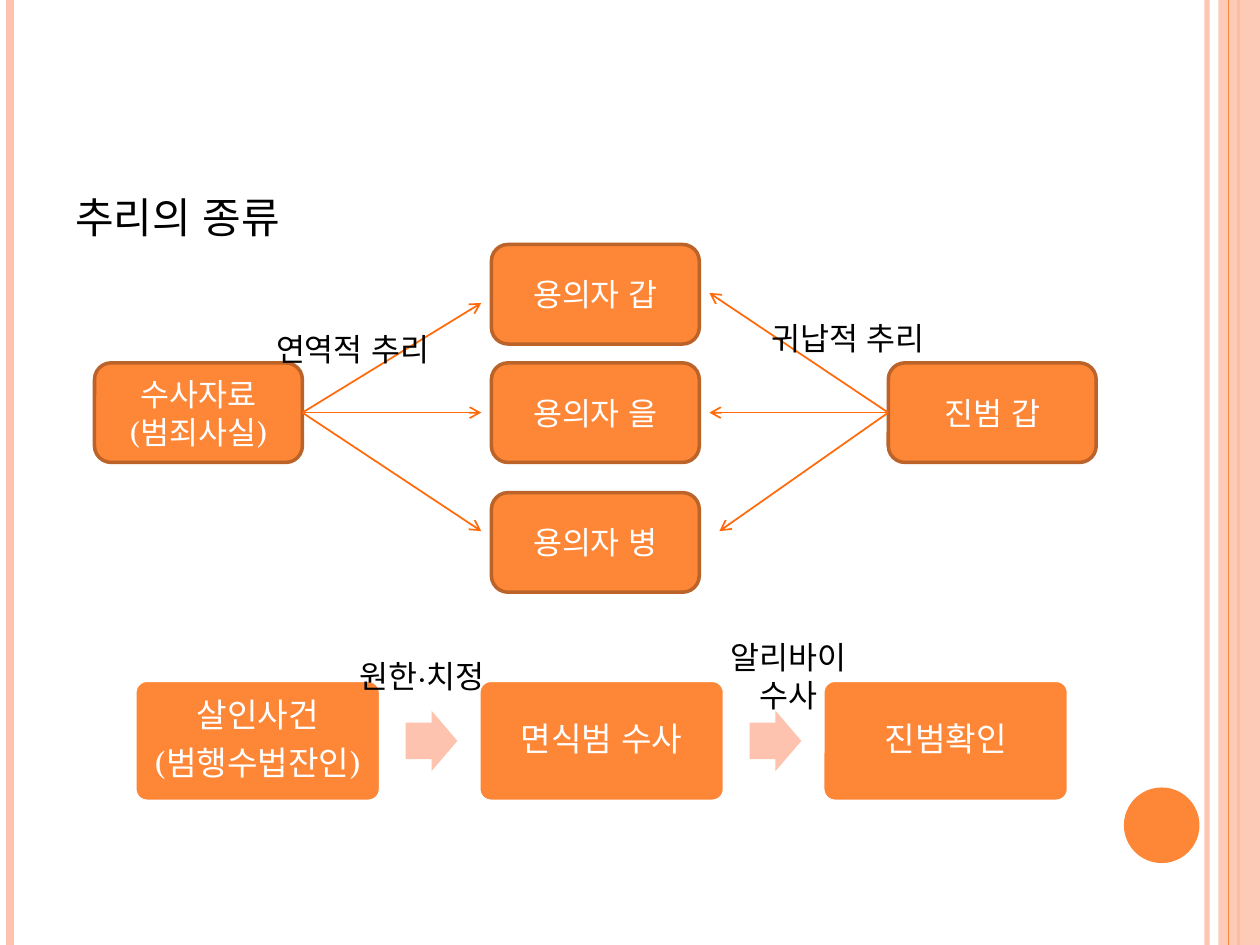
from dataclasses import dataclass

from lxml import etree
from pptx import Presentation
from pptx import util as u
from pptx.dml.color import RGBColor
from pptx.enum import shapes, text
from pptx.oxml import ns

Inches, Pt = u.Inches, u.Pt
SHAPE = shapes.MSO_SHAPE


@dataclass(frozen=True)
class Theme:
    font: str = "TeX Gyre Schola"
    orange: str = "FE8637"
    peach: str = "FEC3AE"
    brown: str = "BC6329"
    arrow: str = "FF6B0A"
    black: str = "000000"
    white: str = "FFFFFF"
    heading_size: float = 24
    step_size: float = 19
    body_size: float = 18


THEME = Theme()


def rgb(color):
    return RGBColor.from_string(color)


def set_opacity(shape, percent):
    for color in shape._element.spPr.iter(ns.qn("a:srgbClr")):
        etree.SubElement(color, ns.qn("a:alpha"), val=str(percent * 1000))


def write(shape, lines, size=THEME.body_size, color=THEME.black,
          align=text.PP_ALIGN.CENTER, anchor=text.MSO_ANCHOR.MIDDLE,
          inset=None, line_spacing=None, space_after=None):
    frame = shape.text_frame
    frame.word_wrap = True
    frame.vertical_anchor = anchor
    if inset is not None:
        frame.margin_left = frame.margin_right = Inches(inset)
        frame.margin_top = frame.margin_bottom = Inches(inset)
    for i, line in enumerate(lines.split("\n")):
        paragraph = frame.paragraphs[0] if i == 0 else frame.add_paragraph()
        paragraph.alignment = align
        paragraph.line_spacing = line_spacing
        paragraph.space_after = space_after
        run = paragraph.add_run()
        run.text = line
        run.font.name, run.font.size = THEME.font, Pt(size)
        run.font.color.rgb = rgb(color)
        # Korean text takes its font from the East Asian slot
        etree.SubElement(run._r.get_or_add_rPr(), ns.qn("a:ea"), typeface=THEME.font)


def add_label(slide, box, words, **style):
    label = slide.shapes.add_textbox(*map(Inches, box))
    write(label, words, **style)


def add_block(slide, kind, box, fill, outline=None, adjustments=()):
    block = slide.shapes.add_shape(kind, *map(Inches, box))
    block.shadow.inherit = False
    block.fill.solid()
    block.fill.fore_color.rgb = rgb(fill)
    if outline:
        block.line.color.rgb = rgb(outline)
        block.line.width = Pt(2)
    else:
        block.line.fill.background()
    for i, value in enumerate(adjustments):
        block.adjustments[i] = value
    return block


def add_line(slide, start, end, color, width, arrow=False):
    line = slide.shapes.add_connector(
        shapes.MSO_CONNECTOR.STRAIGHT, *map(Inches, (*start, *end)))
    line.line.color.rgb = rgb(color)
    line.line.width = Pt(width)
    if arrow:
        etree.SubElement(line.line._get_or_add_ln(), ns.qn("a:tailEnd"), type="arrow")
    etree.SubElement(line._element.spPr, ns.qn("a:effectLst"))
    return line


def add_frame(slide, width, height):
    """Stripes along both edges and the corner disc."""
    def stripe(x, color, weight):
        return add_line(slide, (x, 0), (x, height), color, weight)

    set_opacity(stripe(width - 0.42, THEME.peach, 3), 93)
    stripe(0.08, THEME.peach, 4.5)
    stripe(width - 0.17, THEME.orange, 1.5)
    band = add_block(slide, SHAPE.RECTANGLE, (width - 0.33, 0, 0.33, height), THEME.peach)
    set_opacity(band, 87)
    stripe(width - 0.25, THEME.orange, 0.75)
    add_block(slide, SHAPE.OVAL, (width - 1.08, height - 1.25, 0.6, 0.6), THEME.orange)


def add_inference(slide, box):
    """Evidence and culprit both pointing at the three suspects."""
    left, top, width, height = box
    node_w, node_h = 1.65, 0.79
    middle_top = top + 0.94
    center_y = middle_top + node_h / 2
    suspects_x = left + (width - node_w) / 2
    culprit_x = left + width - node_w
    nodes = [
        ("용의자 갑", suspects_x, top),
        ("용의자 을", suspects_x, middle_top),
        ("용의자 병", suspects_x, top + height - node_h),
        ("진범 갑", culprit_x, middle_top),
        ("수사자료\n(범죄사실)", left, middle_top),
    ]
    for words, x, y in nodes:
        node = add_block(slide, SHAPE.ROUNDED_RECTANGLE, (x, y, node_w, node_h),
                         THEME.orange, THEME.brown)
        write(node, words, color=THEME.white)

    # Arrow tips, as offsets from each fan's origin
    fans = [
        (left + node_w, [(1.42, 0), (1.42, -0.87), (1.42, 0.94)]),
        (culprit_x, [(-1.42, 0), (-1.42, -0.95), (-1.34, 0.94)]),
    ]
    for x, tips in fans:
        for dx, dy in tips:
            add_line(slide, (x, center_y), (x + dx, center_y + dy),
                     THEME.arrow, 1, arrow=True)

    add_label(slide, (left + 1.34, top + 0.55, 1.42, 0.55), "연역적 추리")
    add_label(slide, (left + 5.27, top + 0.47, 1.42, 0.55), "귀납적 추리")


def add_process(slide, box):
    """Three steps in a row, with an arrow in each gap."""
    left, top, width, height = box
    steps = ["살인사건\n(범행수법잔인)", "면식범 수사", "진범확인"]
    step_w, arrow_w, arrow_h = 1.95, 0.41, 0.48
    pitch = (width - step_w) / (len(steps) - 1)
    for i, words in enumerate(steps):
        x = left + i * pitch
        step = add_block(slide, SHAPE.ROUNDED_RECTANGLE, (x, top, step_w, height),
                         THEME.orange, THEME.white, [0.1])
        write(step, words, size=THEME.step_size, color=THEME.white, inset=0.02,
              line_spacing=0.9, space_after=Pt(THEME.step_size * 0.35))
        if i < len(steps) - 1:
            add_block(slide, SHAPE.RIGHT_ARROW,
                      (x + step_w + 0.2, top + (height - arrow_h) / 2, arrow_w, arrow_h),
                      THEME.peach, adjustments=[0.6, 0.5])

    add_label(slide, (left + 1.57, top - 0.31, 1.42, 0.55), "원한·치정")
    add_label(slide, (left + 4.4, top - 0.31, 1.57, 0.55), "알리바이 수사")


def main():
    width, height = 10, 7.5
    deck = Presentation()
    deck.slide_width, deck.slide_height = Inches(width), Inches(height)
    slide = deck.slides.add_slide(deck.slide_layouts[6])

    add_frame(slide, width, height)
    add_label(slide, (0.5, 1.47, 8.17, 0.6), "추리의 종류", size=THEME.heading_size,
              align=text.PP_ALIGN.LEFT, anchor=text.MSO_ANCHOR.TOP)
    add_process(slide, (1.07, 5.4, 7.41, 0.96))
    add_inference(slide, (0.75, 1.94, 7.95, 2.76))

    deck.save("out.pptx")


if __name__ == "__main__":
    main()
